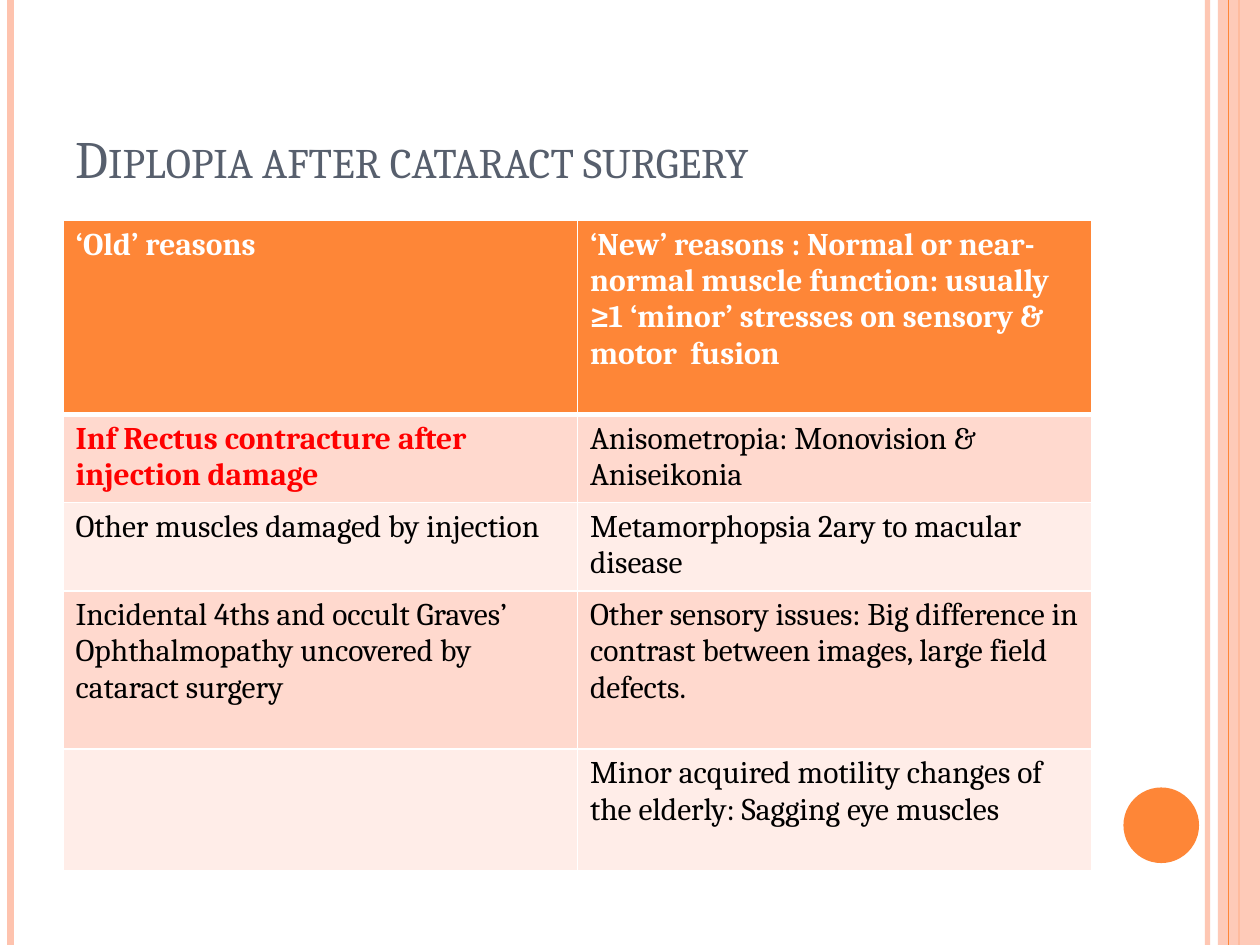
from dataclasses import dataclass

from pptx import Presentation
from pptx.dml.color import RGBColor
from pptx.enum import shapes, text
from pptx.oxml import ns
from pptx.util import Pt
from lxml import etree

WHITE = RGBColor(0xFF, 0xFF, 0xFF)
BLACK = RGBColor(0, 0, 0)
RED = RGBColor(0xFF, 0, 0)
SLATE = RGBColor(0x57, 0x5F, 0x6D)
ORANGE = RGBColor(0xFE, 0x86, 0x37)
PEACH = RGBColor(0xFE, 0xC3, 0xAE)
BAND_DARK = RGBColor(0xFF, 0xD9, 0xCE)
BAND_LIGHT = RGBColor(0xFF, 0xED, 0xE8)
FONT = "Cambria"
WIDTH, HEIGHT = 720, 540


@dataclass
class Stripe:
    x: float
    weight: float
    color: RGBColor
    opacity: int = 100


@dataclass
class Block:
    kind: shapes.MSO_SHAPE
    left: float
    top: float
    width: float
    height: float
    color: RGBColor
    opacity: int = 100


@dataclass
class Row:
    height: float
    old: str
    new: str


DECORATIONS = [
    Stripe(690, 3, PEACH, 93),
    Stripe(6, 4.5, PEACH),
    Stripe(708, 1.5, ORANGE),
    Block(shapes.MSO_SHAPE.RECTANGLE, 696, 0, 24, HEIGHT, PEACH, 87),
    Stripe(702, 0.75, ORANGE),
    Block(shapes.MSO_SHAPE.OVAL, 642, 450, 43.2, 43.2, ORANGE),
]
ROWS = [
    Row(110.8, "‘Old’ reasons",
        "‘New’ reasons : Normal or near- normal muscle function: usually "
        "≥1 ‘minor’ stresses on sensory & motor  fusion"),
    Row(48.8, "Inf Rectus contracture after injection damage",
        "Anisometropia: Monovision & Aniseikonia"),
    Row(48.8, "Other muscles damaged by injection",
        "Metamorphopsia 2ary to macular disease"),
    Row(90.4, "Incidental 4ths and occult Graves’ Ophthalmopathy uncovered by cataract surgery",
        "Other sensory issues: Big difference in contrast between images, large field defects."),
    Row(69.4, "", "Minor acquired motility changes of the elderly: Sagging eye muscles"),
]


def set_opacity(element, percent: int) -> None:
    if percent < 100:
        for color in element.iter(ns.qn("a:srgbClr")):
            etree.SubElement(color, ns.qn("a:alpha"), val=str(percent * 1000))


def draw_stripe(slide, stripe: Stripe) -> None:
    line = slide.shapes.add_connector(
        shapes.MSO_CONNECTOR.STRAIGHT, Pt(stripe.x), Pt(0), Pt(stripe.x), Pt(HEIGHT))
    line.line.width = Pt(stripe.weight)
    line.line.color.rgb = stripe.color
    properties = line._element.spPr
    set_opacity(properties, stripe.opacity)
    etree.SubElement(properties, ns.qn("a:effectLst"))


def draw_block(slide, block: Block) -> None:
    shape = slide.shapes.add_shape(
        block.kind, Pt(block.left), Pt(block.top), Pt(block.width), Pt(block.height))
    shape.shadow.inherit = False
    shape.fill.solid()
    shape.fill.fore_color.rgb = block.color
    shape.line.fill.background()
    set_opacity(shape._element.spPr, block.opacity)


def add_run(paragraph, content: str, size: float, color: RGBColor, bold: bool = False):
    run = paragraph.add_run()
    run.text = content
    run.font.name = FONT
    run.font.size = Pt(size)
    run.font.color.rgb = color
    run.font.bold = bold
    return run


def draw_title(slide, content: str) -> None:
    box = slide.shapes.add_textbox(Pt(36), Pt(21.6), Pt(588), Pt(90))
    frame = box.text_frame
    frame.word_wrap = True
    frame.vertical_anchor = text.MSO_ANCHOR.BOTTOM
    run = add_run(frame.paragraphs[0], content, 30, SLATE)
    run.font._element.set("cap", "small")


def set_borders(cell, top: float, bottom: float) -> None:
    properties = cell._tc.get_or_add_tcPr()
    widths = {"a:lnL": 1, "a:lnR": 1, "a:lnT": top, "a:lnB": bottom}
    for position, (tag, width) in enumerate(widths.items()):
        border = etree.Element(ns.qn(tag), w=str(Pt(width)))
        fill = etree.SubElement(border, ns.qn("a:solidFill"))
        etree.SubElement(fill, ns.qn("a:srgbClr"), val=str(WHITE))
        properties.insert(position, border)


def draw_table(slide, rows: list[Row]) -> None:
    total = sum(row.height for row in rows)
    table = slide.shapes.add_table(
        len(rows), 2, Pt(36), Pt(126), Pt(588), Pt(total)).table
    for row_index, row in enumerate(rows):
        table.rows[row_index].height = Pt(row.height)
        header = row_index == 0
        band = ORANGE if header else BAND_DARK if row_index % 2 else BAND_LIGHT
        for column_index, content in enumerate((row.old, row.new)):
            cell = table.cell(row_index, column_index)
            cell.fill.solid()
            cell.fill.fore_color.rgb = band
            set_borders(cell, 3 if row_index == 1 else 1, 3 if header else 1)
            highlighted = (row_index, column_index) == (1, 0)
            color = WHITE if header else RED if highlighted else BLACK
            if content:
                add_run(cell.text_frame.paragraphs[0], content, 18, color, header or highlighted)


def main() -> None:
    presentation = Presentation()
    presentation.slide_width = Pt(WIDTH)
    presentation.slide_height = Pt(HEIGHT)
    slide = presentation.slides.add_slide(presentation.slide_layouts[6])
    for decoration in DECORATIONS:
        if isinstance(decoration, Stripe):
            draw_stripe(slide, decoration)
        else:
            draw_block(slide, decoration)
    draw_title(slide, "Diplopia after cataract surgery")
    draw_table(slide, ROWS)
    presentation.save("out.pptx")


if __name__ == "__main__":
    main()
